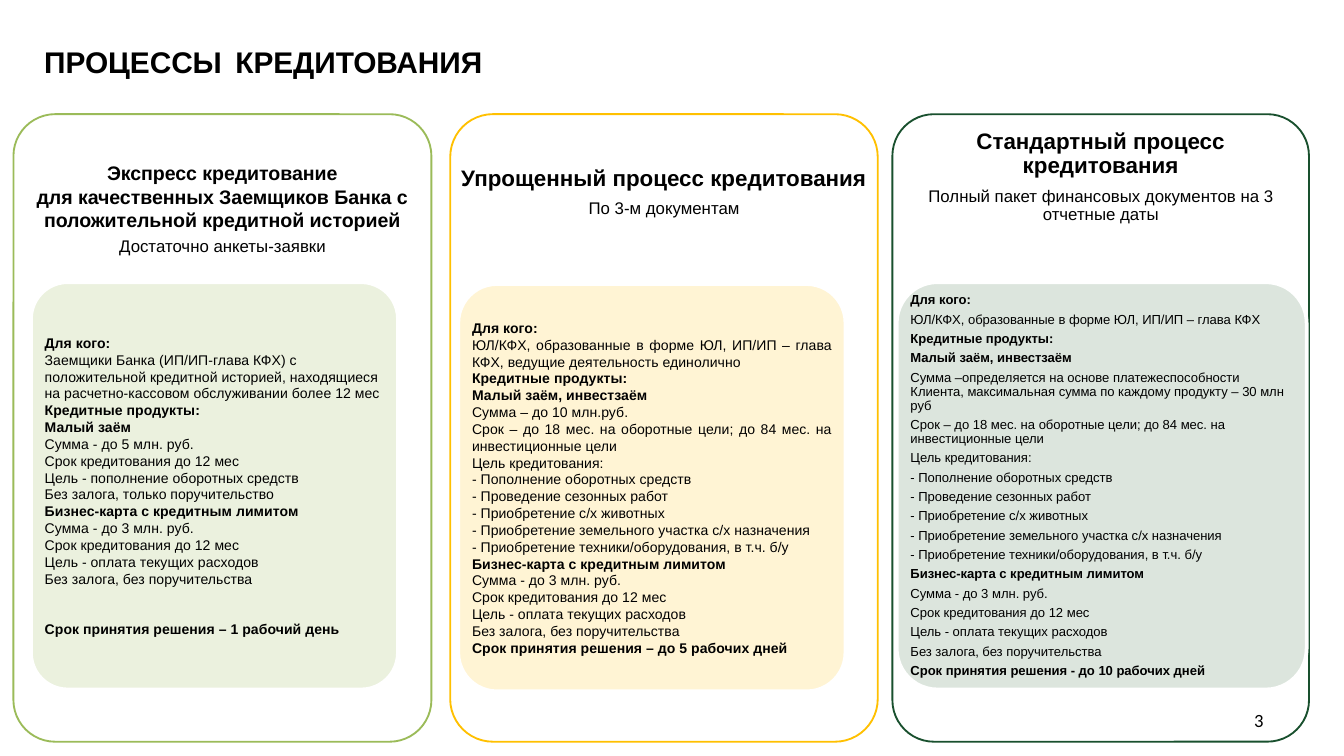
import dataclasses

import pptx
import pptx.dml.color
import pptx.enum.shapes
import pptx.enum.text
import pptx.oxml
import pptx.oxml.ns
import pptx.util

Pt = pptx.util.Pt
ALIGN = pptx.enum.text.PP_ALIGN
FONT = "Arial"
CARD_TOP, CARD_HEIGHT, HEADER_HEIGHT = 61.2, 336.2, 100.8
PANEL_HEIGHT, PANEL_PADDING = 218.2, 6

PURPOSES = [
    "Цель кредитования:",
    "- Пополнение оборотных средств",
    "- Проведение сезонных работ",
    "- Приобретение с/х животных",
    "- Приобретение земельного участка с/х назначения",
    "- Приобретение техники/оборудования, в т.ч. б/у",
]
BUSINESS_CARD = [
    "*Бизнес-карта с кредитным лимитом",
    "Сумма - до 3 млн. руб.",
    "Срок кредитования до 12 мес",
    "Цель - оплата текущих расходов",
    "Без залога, без поручительства",
]
TERM = "Срок – до 18 мес. на оборотные цели; до 84 мес. на инвестиционные цели"
PRODUCTS = ["*Кредитные продукты:", "*Малый заём, инвестзаём"]


@dataclasses.dataclass
class Card:
    """One lending process: its frame, heading and inner panel."""

    left: float
    width: float
    colour: str
    heading: list
    heading_size: float
    heading_bottom: float
    panel: tuple
    panel_colour: str
    panel_alpha: int
    details: list
    detail_size: float
    alignment: object = ALIGN.LEFT
    spacing: float = 1
    gap: float = 0
    decision_gap: float = 0


CARDS = [
    Card(7.2, 223.9, "9BBB59",
         ["*Экспресс кредитование",
          "*для качественных Заемщиков Банка с положительной кредитной историей",
          "Достаточно анкеты-заявки"],
         10.5, 3.6, (16.6, 151.2, 196.6), "EBF1DE", 100,
         ["*Для кого:",
          "Заемщики Банка (ИП/ИП-глава КФХ) с положительной кредитной историей, "
          "находящиеся на расчетно-кассовом обслуживании более 12 мес",
          "*Кредитные продукты:",
          "*Малый заём",
          "Сумма - до 5 млн. руб.",
          "Срок кредитования до 12 мес",
          "Цель - пополнение оборотных средств",
          "Без залога, только поручительство",
          *BUSINESS_CARD,
          "*Срок принятия решения – 1 рабочий день"],
         7.5, decision_gap=18),
    Card(241.2, 229, "FFC000",
         ["*Упрощенный процесс кредитования", "По 3-м документам"],
         12, 20, (245.5, 152.2, 207.4), "FFC000", 17,
         ["*Для кого:",
          "ЮЛ/КФХ, образованные в форме ЮЛ, ИП/ИП – глава КФХ, "
          "ведущие деятельность единолично",
          *PRODUCTS,
          "Сумма – до 10 млн.руб.",
          TERM, *PURPOSES, *BUSINESS_CARD,
          "*Срок принятия решения – до 5 рабочих дней"],
         7.5, alignment=ALIGN.JUSTIFY, spacing=0.9),
    Card(478.1, 223.2, "19502E",
         ["*Стандартный процесс кредитования",
          "Полный пакет финансовых документов на 3 отчетные даты"],
         12, 37, (480.4, 151.2, 219.6), "2B6030", 16,
         ["*Для кого:",
          "ЮЛ/КФХ, образованные в форме ЮЛ, ИП/ИП – глава КФХ",
          *PRODUCTS,
          "Сумма –определяется на основе платежеспособности Клиента, "
          "максимальная сумма по каждому продукту – 30 млн руб",
          TERM, *PURPOSES, *BUSINESS_CARD,
          "*Срок принятия решения - до 10 рабочих дней"],
         7, spacing=0.9, gap=2.8),
]


def rgb(colour):
    """Turn a hex string into a colour."""
    return pptx.dml.color.RGBColor.from_string(colour)


def set_font(font, size, bold=False, name=FONT):
    """Set size, weight and typeface in black."""
    font.size, font.bold, font.name = Pt(size), bold, name
    font.color.rgb = rgb("000000")


def add_rounded(slide, bounds, line, width, fill=None, alpha=100):
    """Draw a rounded rectangle with an optional translucent fill."""
    shape = slide.shapes.add_shape(
        pptx.enum.shapes.MSO_SHAPE.ROUNDED_RECTANGLE, *map(Pt, bounds))
    shape.adjustments[0] = 0.1
    shape.shadow.inherit = False
    shape.line.color.rgb = rgb(line)
    shape.line.width = Pt(width)
    if fill is None:
        shape.fill.background()
        return
    shape.fill.solid()
    shape.fill.fore_color.rgb = rgb(fill)
    if alpha < 100:
        colour = shape.fill._xPr.find(".//" + pptx.oxml.ns.qn("a:srgbClr"))
        colour.append(pptx.oxml.parse_xml(
            f'<a:alpha {pptx.oxml.ns.nsdecls("a")} val="{alpha * 1000}"/>'))


def add_text_box(slide, bounds, insets):
    """Add a wrapping, vertically centred text frame."""
    frame = slide.shapes.add_textbox(*map(Pt, bounds)).text_frame
    frame.word_wrap = True
    frame.vertical_anchor = pptx.enum.text.MSO_ANCHOR.MIDDLE
    (frame.margin_left, frame.margin_top,
     frame.margin_right, frame.margin_bottom) = map(Pt, insets)
    return frame


def add_paragraphs(frame, lines, sizes, alignment, spacing, gaps):
    """Fill a frame with lines, where a leading asterisk means bold."""
    for index, (line, size, gap) in enumerate(zip(lines, sizes, gaps)):
        paragraph = frame.add_paragraph() if index else frame.paragraphs[0]
        paragraph.text = line.removeprefix("*")
        paragraph.alignment = alignment
        paragraph.line_spacing = spacing
        paragraph.space_after = Pt(gap)
        set_font(paragraph.font, size, line.startswith("*"))
    return paragraph


def add_title(slide):
    """Add the slide title with its wide word gap."""
    frame = add_text_box(slide, (16.6, 6.5, 648, 40.3), (7.2, 3.6, 7.2, 3.6))
    for text, size, bold, name in (("ПРОЦЕССЫ", 16, True, FONT),
                                   (" ", 31.5, False, "Calibri"),
                                   ("КРЕДИТОВАНИЯ", 16, True, FONT)):
        run = frame.paragraphs[0].add_run()
        run.text = text
        set_font(run.font, size, bold, name)


def add_page_number(slide):
    """Add the page number at the lower right."""
    frame = add_text_box(slide, (516.2, 375.1, 167.8, 21.6), (7.2, 3.6, 7.2, 3.6))
    paragraph = frame.paragraphs[0]
    paragraph.text = "3"
    paragraph.alignment = ALIGN.RIGHT
    set_font(paragraph.font, 10, name="Calibri")


def add_card(slide, card):
    """Draw a frame, its heading, its panel and the panel's details."""
    add_rounded(slide, (card.left, CARD_TOP, card.width, CARD_HEIGHT), card.colour, 1)
    heading = add_text_box(slide, (card.left, CARD_TOP, card.width, HEADER_HEIGHT),
                           (3.6, 3.6, 3.6, card.heading_bottom))
    sizes = [card.heading_size if line.startswith("*") else 9 for line in card.heading]
    gaps = [0, 2, 2] if len(sizes) == 3 else [0.4 * size for size in sizes]
    add_paragraphs(heading, card.heading, sizes, ALIGN.CENTER,
                   1 if len(sizes) == 3 else 0.9, gaps)

    left, top, width = card.panel
    add_rounded(slide, (left, top, width, PANEL_HEIGHT), "FFFFFF", 2,
                card.panel_colour, card.panel_alpha)
    details = add_text_box(
        slide, (left + PANEL_PADDING, top + PANEL_PADDING,
                width - 2 * PANEL_PADDING, PANEL_HEIGHT - 2 * PANEL_PADDING),
        (1.4, 1.4, 1.4, 1.4))
    count = len(card.details)
    spacing = card.spacing if card.gap else 1
    decision = add_paragraphs(details, card.details, [card.detail_size] * count,
                              card.alignment, spacing, [card.gap] * count)
    decision.space_before = Pt(card.decision_gap)


def main():
    """Build and save the slide."""
    presentation = pptx.Presentation()
    presentation.slide_width, presentation.slide_height = Pt(720), Pt(405)
    slide = presentation.slides.add_slide(presentation.slide_layouts[6])
    add_page_number(slide)
    add_title(slide)
    for card in CARDS:
        add_card(slide, card)
    presentation.save("out.pptx")


if __name__ == "__main__":
    main()
